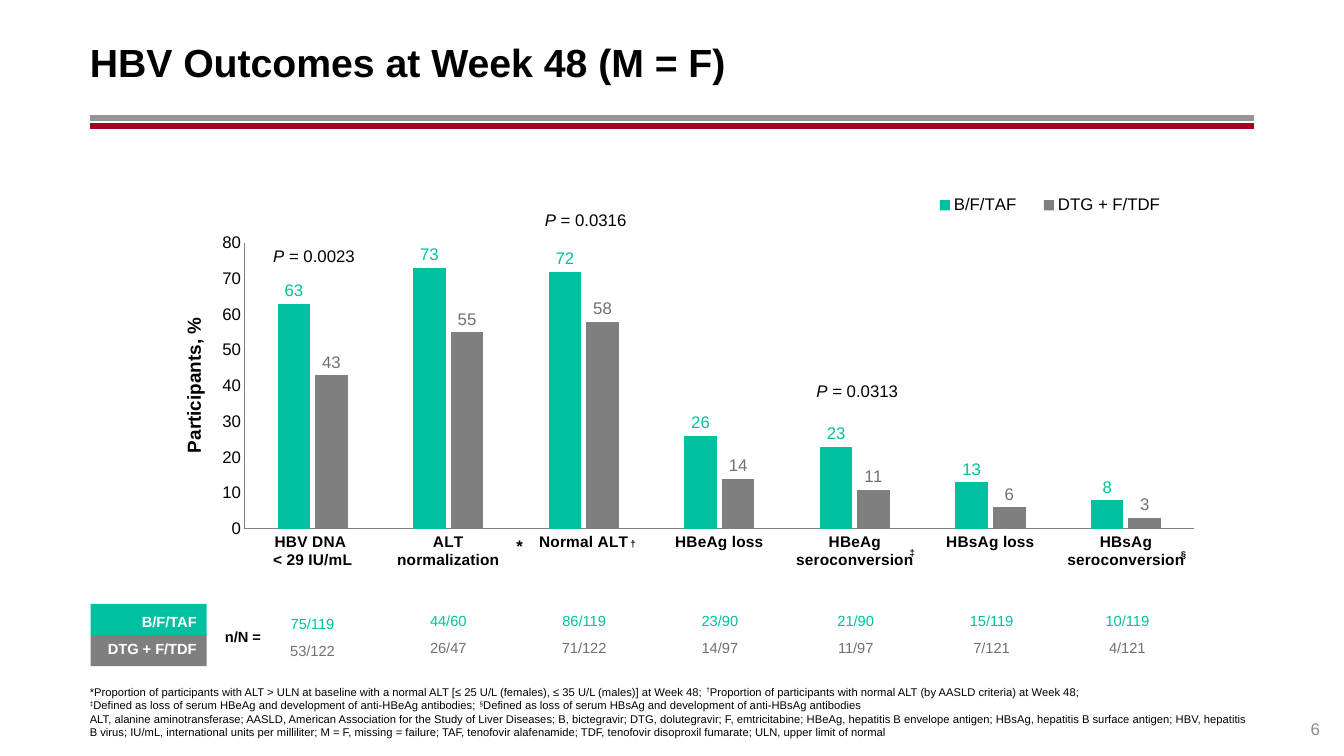
"""Build the slide of HBV outcomes at week 48 with its column chart and counts."""
import pptx
import pptx.chart.data
import pptx.dml.color
import pptx.enum.chart
import pptx.enum.shapes
import pptx.enum.text
import pptx.oxml
import pptx.oxml.ns
import pptx.util
from dataclasses import dataclass

Inches = pptx.util.Inches
Align = pptx.enum.text.PP_ALIGN
Anchor = pptx.enum.text.MSO_ANCHOR


@dataclass(frozen=True)
class Theme:
    font: str = "Arial"
    black: str = "000000"
    white: str = "FFFFFF"
    teal: str = "00C0A0"
    gray: str = "7F7F7F"
    gray_text: str = "717074"
    axis: str = "808080"
    number: str = "8C8C8C"
    rule_gray: str = "969696"
    rule_red: str = "A50021"
    title: float = 28
    axis_title: float = 13.5
    label: float = 12
    category: float = 11
    count: float = 10.5
    note: float = 8


theme = Theme()


def style(font, size, color=theme.black, bold=False, italic=False):
    font.name = theme.font
    font.size = pptx.util.Pt(size)
    font.bold = bold
    font.italic = italic
    font.color.rgb = pptx.dml.color.RGBColor.from_string(color)


def write(box, spans, size, color=theme.black, bold=False, align=Align.LEFT,
          anchor=Anchor.TOP, wrap=False, margin=None, new=False):
    """Write (text, mark) spans; mark is "i" for italic, "s" for superscript."""
    frame = box.text_frame
    frame.word_wrap = wrap
    frame.vertical_anchor = anchor
    if margin is not None:
        frame.margin_left = frame.margin_right = Inches(margin)
        frame.margin_top = frame.margin_bottom = Inches(margin)
    para = frame.add_paragraph() if new else frame.paragraphs[0]
    para.alignment = align
    for text, mark in spans:
        if text == "\n":
            para.add_line_break()
            continue
        span = para.add_run()
        span.text = text
        style(span.font, size, color, bold, mark == "i")
        if mark == "s":
            span.font._element.set("baseline", "30000")


deck = pptx.Presentation()
deck.slide_width, deck.slide_height = Inches(13.33), Inches(7.5)
page = deck.slides.add_slide(deck.slide_layouts[5])
shapes = page.shapes

for top, color in ((1.17, theme.rule_gray), (1.25, theme.rule_red)):
    rule = shapes.add_connector(pptx.enum.shapes.MSO_CONNECTOR.STRAIGHT,
                                Inches(0.89), Inches(top), Inches(12.44), Inches(top))
    rule.line.color.rgb = pptx.dml.color.RGBColor.from_string(color)
    rule.line.width = pptx.util.Pt(4.25)
    rule._element.spPr.append(pptx.oxml.parse_xml(
        f'<a:effectLst {pptx.oxml.ns.nsdecls("a")}/>'))

title = shapes.title
title.left, title.top = Inches(0.89), Inches(0.18)
title.width, title.height = Inches(11.56), Inches(0.86)
write(title, [("HBV Outcomes at Week 48 (M = F)", "")], theme.title, bold=True,
      anchor=Anchor.MIDDLE, wrap=True)
title.text_frame.margin_left = 0

number = shapes.add_textbox(Inches(12.44), Inches(6.93), Inches(0.65), Inches(0.4))
write(number, [("6", "")], theme.label, theme.number, align=Align.RIGHT,
      anchor=Anchor.BOTTOM, wrap=True, margin=0)

notes = (
    [("*Proportion of participants with ALT > ULN at baseline with a normal ALT "
      "[≤ 25 U/L (females), ≤ 35 U/L (males)] at Week 48; ", ""), ("†", "s"),
     ("Proportion of participants with normal ALT (by AASLD criteria) at Week 48; ", ""),
     ("\n", ""), ("‡", "s"),
     ("Defined as loss of serum HBeAg and development of anti-HBeAg antibodies; ", ""),
     ("§", "s"),
     ("Defined as loss of serum HBsAg and development of anti-HBsAg antibodies", "")],
    [("ALT, alanine aminotransferase; AASLD, American Association for the Study of Liver "
      "Diseases; B, bictegravir; DTG, dolutegravir; F, emtricitabine; HBeAg, hepatitis B "
      "envelope antigen; HBsAg, hepatitis B surface antigen; HBV, hepatitis B virus; IU/mL, "
      "international units per milliliter; M = F, missing = failure; TAF, tenofovir "
      "alafenamide; TDF, tenofovir disoproxil fumarate; ULN, upper limit of normal", "")],
)
footnote = shapes.add_textbox(Inches(0.89), Inches(6.66), Inches(11.55), Inches(0.67))
for index, spans in enumerate(notes):
    write(footnote, spans, theme.note, anchor=Anchor.BOTTOM, wrap=True, margin=0,
          new=index > 0)

arms = (
    ("B/F/TAF", (63, 73, 72, 26, 23, 13, 8), theme.teal, theme.teal, Anchor.BOTTOM,
     ("75/119", "44/60", "86/119", "23/90", "21/90", "15/119", "10/119")),
    ("DTG + F/TDF", (43, 55, 58, 14, 11, 6, 3), theme.gray, theme.gray_text, Anchor.TOP,
     ("53/122", "26/47", "71/122", "14/97", "11/97", "7/121", "4/121")),
)
data = pptx.chart.data.CategoryChartData()
data.categories = ["HBV DNA \n< 29 IU/mL", "ALT normalization", "Normal ALT", "HBeAg loss",
                   "HBeAg seroconversion", "HBsAg loss", "HBsAg seroconversion"]
for name, values, *rest in arms:
    data.add_series(name, values)
chart = shapes.add_chart(pptx.enum.chart.XL_CHART_TYPE.COLUMN_CLUSTERED, Inches(1.56),
                         Inches(1.34), Inches(10.48), Inches(4.8), data).chart
chart.has_title = False
style(chart.font, theme.label)
plot = chart.plots[0]
plot.gap_width, plot.overlap, plot.vary_by_categories = 200, -15, False
for series, (name, values, fill, ink, *rest) in zip(plot.series, arms):
    series.format.fill.solid()
    series.format.fill.fore_color.rgb = pptx.dml.color.RGBColor.from_string(fill)
    labels = series.data_labels
    labels.show_value = True
    labels.position = pptx.enum.chart.XL_LABEL_POSITION.OUTSIDE_END
    labels.number_format, labels.number_format_is_linked = "#,##0;[Red]#,##0", False
    style(labels.font, theme.label, ink)

for axis, size, bold in ((chart.category_axis, theme.category, True),
                         (chart.value_axis, theme.label, False)):
    axis.has_major_gridlines = False
    axis.major_tick_mark = axis.minor_tick_mark = pptx.enum.chart.XL_TICK_MARK.NONE
    axis.format.line.color.rgb = pptx.dml.color.RGBColor.from_string(theme.axis)
    axis.format.line.width = pptx.util.Pt(0.75)
    style(axis.tick_labels.font, size, bold=bold)
scale = chart.value_axis
scale.minimum_scale, scale.maximum_scale, scale.major_unit = 0, 80, 10
scale.tick_labels.number_format = "0;[Red]0"
scale.tick_labels.number_format_is_linked = False
span = scale.axis_title.text_frame.paragraphs[0].add_run()
span.text = "Participants, %"
style(span.font, theme.axis_title, bold=True)
chart.has_legend = True
legend = chart.legend
legend.position = pptx.enum.chart.XL_LEGEND_POSITION.BOTTOM
legend.include_in_layout = False
style(legend.font, theme.label)

placements = (
    (chart._chartSpace.chart.plotArea, "inner", {"x": 0.083, "y": 0.223, "w": 0.898, "h": 0.591}),
    (legend._element, "", {"x": 0.72, "y": 0.11, "w": 0.25, "h": 0.07}),
    (scale.axis_title._element, "", {"x": 0.02, "y": 0.37}),
)
for part, target, place in placements:
    for old in part.findall(pptx.oxml.ns.qn("c:layout")):
        part.remove(old)
    inside = f'<c:layoutTarget val="{target}"/>' if target else ""
    modes = "".join(f'<c:{key}Mode val="edge"/>' for key in "xy")
    sizes = "".join(f'<c:{key} val="{value}"/>' for key, value in place.items())
    layout = pptx.oxml.parse_xml(
        f'<c:layout {pptx.oxml.ns.nsdecls("c")}><c:manualLayout>{inside}{modes}{sizes}'
        '</c:manualLayout></c:layout>')
    part.insert(0 if target else 1, layout)

column_step = 1.347
for row, (name, values, fill, ink, anchor, counts) in enumerate(arms):
    key = shapes.add_shape(pptx.enum.shapes.MSO_SHAPE.RECTANGLE, Inches(0.9),
                           Inches(5.99 + row * 0.31), Inches(1.15), Inches(0.31))
    key.shadow.inherit = False
    key.fill.solid()
    key.fill.fore_color.rgb = pptx.dml.color.RGBColor.from_string(fill)
    key.line.fill.background()
    write(key, [(name, "")], theme.count, theme.white, True, Align.RIGHT, anchor)
    for column, count in enumerate(counts):
        top = (6.01 if column == 0 else 5.98) + row * 0.31
        box = shapes.add_textbox(Inches(2.72 + column * column_step), Inches(top),
                                 Inches(0.76), Inches(0.31))
        write(box, [(count, "")], theme.count, ink, align=Align.CENTER, anchor=anchor)

ratio = shapes.add_textbox(Inches(2.03), Inches(6.14), Inches(0.76), Inches(0.31))
write(ratio, [("n/N =", "")], theme.count, bold=True, align=Align.CENTER, anchor=Anchor.BOTTOM)

for column, top, value in ((0, 2.39, "0.0023"), (2, 2.03, "0.0316"), (4, 3.73, "0.0313")):
    box = shapes.add_textbox(Inches(2.6 + column * column_step), Inches(top),
                             Inches(1.03), Inches(0.31))
    write(box, [("P", "i"), (f" = {value}", "")], theme.label, align=Align.CENTER)

for left, top, sign, mark in ((5.04, 5.33, "*", ""), (6.17, 5.33, "†", "s"),
                              (8.94, 5.42, "‡", "s"), (11.63, 5.44, "§", "s")):
    box = shapes.add_textbox(Inches(left), Inches(top), Inches(0.18), Inches(0.23))
    write(box, [(sign, mark)], theme.label, bold=True, anchor=Anchor.BOTTOM)

deck.save("out.pptx")
